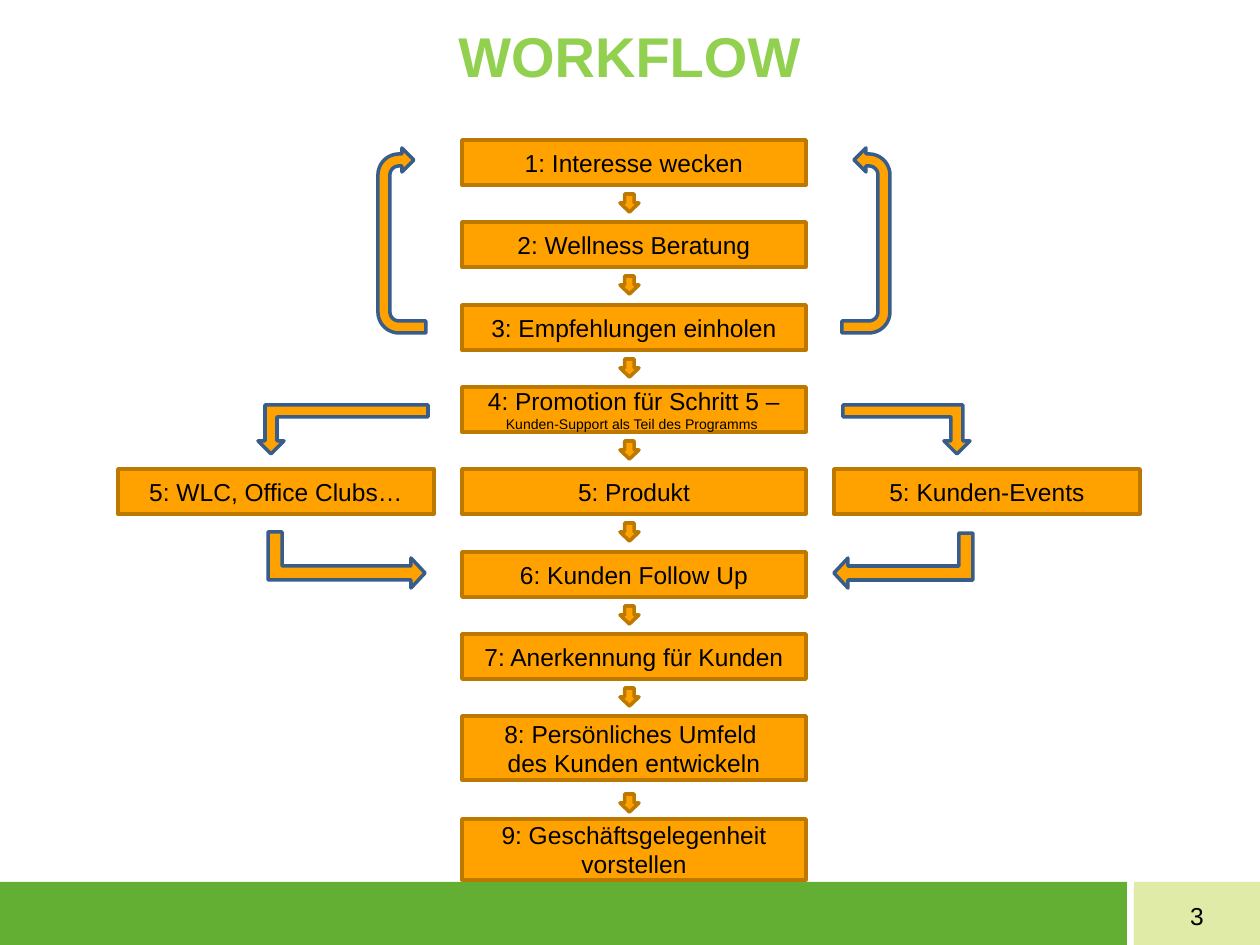
"""Build the WORKFLOW slide: a column of nine steps with side branches and return loops."""
from dataclasses import dataclass
from math import cos, pi, sin

from pptx import Presentation
from pptx import util as u
from pptx.dml.color import RGBColor
from pptx.enum import shapes, text

SCALE = 914400 / 126
FONT = "Arial"
COLORS = {
    "orange": "FFA200",
    "brown": "BD7800",
    "blue": "385D8A",
    "green": "63AF34",
    "pale": "E1EBA8",
    "title": "92D050",
    "black": "000000",
}
COLUMN_LEFT, COLUMN_WIDTH = 462, 344
ROW_TOP, ROW_PITCH, ROW_HEIGHT = 140, 82.3, 45
MIRROR_SUM = 1268


@dataclass(frozen=True)
class Run:
    """A piece of text with its size in points."""
    words: str
    size: int = 14
    break_after: bool = False


@dataclass(frozen=True)
class Step:
    """A labelled rectangle in the workflow."""
    runs: tuple[Run, ...]
    top: int
    left: int = COLUMN_LEFT
    width: int = COLUMN_WIDTH
    height: int = ROW_HEIGHT


@dataclass(frozen=True)
class BentArrow:
    """A block arrow along a right-angled route of (x, y) points."""
    route: tuple[tuple[int, int], ...]
    half_shaft: int
    half_head: int
    head_length: int
    radius: int = 0


def row_top(index: int) -> int:
    """Return the top of an evenly spaced row."""
    return round(ROW_TOP + index * ROW_PITCH)


LABELS = (
    (Run("1: Interesse wecken"),),
    (Run("2: Wellness Beratung"),),
    (Run("3: Empfehlungen einholen"),),
    (Run("4: Promotion für Schritt 5 – "), Run("Kunden-Support als Teil des Programms ", 8)),
    (Run("5: Produkt"),),
    (Run("6: Kunden Follow Up"),),
    (Run("7: Anerkennung für Kunden"),),
)
COLUMN = [Step(runs, row_top(index)) for index, runs in enumerate(LABELS)] + [
    Step((Run("8: Persönliches Umfeld ", break_after=True), Run("des Kunden entwickeln")), 716, height=64),
    Step((Run("9: Geschäftsgelegenheit vorstellen"),), 819, height=61),
]
BRANCHES = [
    Step((Run("5: WLC, Office Clubs…"),), row_top(4), 118, 316),
    Step((Run("5: Kunden-Events"),), row_top(4), 834, 306),
]
DOWN_ARROW_TOPS = [step.top + 54 for step in COLUMN[:7]] + [794]
LOOP_ROUTE = ((426, 327), (384, 327), (384, 160), (414, 160))
BENT_ARROWS = [
    BentArrow(((428, 411), (271, 411), (271, 454)), 6, 13, 13),
    BentArrow(((843, 411), (957, 411), (957, 454)), 6, 13, 13),
    BentArrow(((275, 532), (275, 573), (425, 573)), 7, 15, 14),
    BentArrow(((966, 533), (966, 573), (834, 573)), 7, 15, 14),
    BentArrow(LOOP_ROUTE, 6, 12, 12, 15),
    BentArrow(tuple((MIRROR_SUM - x, y) for x, y in LOOP_ROUTE), 6, 12, 12, 15),
]


def emu(px: float) -> u.Emu:
    """Convert px to EMU."""
    return u.Emu(round(px * SCALE))


def color(name: str) -> RGBColor:
    """Look up a named colour."""
    return RGBColor.from_string(COLORS[name])


def style(shape, fill: str, line: str | None = None) -> None:
    """Give a shape a flat fill and an optional outline."""
    shape.shadow.inherit = False
    shape.fill.solid()
    shape.fill.fore_color.rgb = color(fill)
    if line:
        shape.line.color.rgb = color(line)
        shape.line.width = u.Pt(2)
    else:
        shape.line.fill.background()


def write(box, runs: tuple[Run, ...], ink: str = "black", bold: bool = False) -> None:
    """Write centred runs into the first paragraph of a box."""
    para = box.text_frame.paragraphs[0]
    para.alignment = text.PP_ALIGN.CENTER
    for run in runs:
        span = para.add_run()
        span.text = run.words
        span.font.name = FONT
        span.font.size = u.Pt(run.size)
        span.font.bold = bold
        span.font.color.rgb = color(ink)
        if run.break_after:
            para.add_line_break()


def add_block(page, kind, left: int, top: int, width: int, height: int, fill: str, line: str | None = None):
    """Add a styled preset shape."""
    block = page.shapes.add_shape(kind, emu(left), emu(top), emu(width), emu(height))
    style(block, fill, line)
    block.text_frame.vertical_anchor = text.MSO_ANCHOR.MIDDLE
    return block


def add_step(page, step: Step) -> None:
    """Add a labelled step rectangle."""
    box = add_block(page, shapes.MSO_SHAPE.RECTANGLE, step.left, step.top,
                    step.width, step.height, "orange", "brown")
    box.text_frame.word_wrap = True
    write(box, step.runs)


def shaft_side(arrow: BentArrow, points: list[complex], ways: list[complex], side: int) -> list[complex]:
    """Trace one side of the shaft from tail to head."""
    offset = side * arrow.half_shaft
    edge = [points[0] + offset * 1j * ways[0]]
    for corner, before, after in zip(points[1:-1], ways, ways[1:]):
        turn = (before.conjugate() * after).imag
        if arrow.radius:
            center = corner + arrow.radius * (after - before)
            reach = arrow.radius - offset * turn
            angles = [pi / 2 * part / 12 for part in range(13)]
            edge += [center + reach * (before * sin(angle) - after * cos(angle)) for angle in angles]
        else:
            edge.append(corner + offset * turn * (after - before))
    neck = points[-1] - arrow.head_length * ways[-1]
    return edge + [neck + reach * side * 1j * ways[-1] for reach in (arrow.half_shaft, arrow.half_head)]


def add_bent_arrow(page, arrow: BentArrow) -> None:
    """Add a block arrow that follows its route."""
    points = [complex(*point) for point in arrow.route]
    ways = [(end - start) / abs(end - start) for start, end in zip(points, points[1:])]
    near, far = (shaft_side(arrow, points, ways, side) for side in (1, -1))
    outline = [(emu(point.real), emu(point.imag)) for point in near + [points[-1]] + far[::-1]]
    builder = page.shapes.build_freeform(*outline[0])
    builder.add_line_segments(outline[1:], close=True)
    style(builder.convert_to_shape(), "orange", "blue")


def add_footer(page) -> None:
    """Add the footer band and the page number."""
    rectangle = shapes.MSO_SHAPE.RECTANGLE
    add_block(page, rectangle, 1134, 882, 126, 63, "pale")
    number = add_block(page, rectangle, 1134, 887, 126, 58, "pale")
    number.text_frame.word_wrap = False
    write(number, (Run("3"),))
    add_block(page, rectangle, 0, 882, 1127, 63, "green")


def main() -> None:
    """Build and save the deck."""
    deck = Presentation()
    deck.slide_width, deck.slide_height = emu(1260), emu(945)
    page = deck.slides.add_slide(deck.slide_layouts[6])
    add_footer(page)
    for step in COLUMN + BRANCHES:
        add_step(page, step)
    for top in DOWN_ARROW_TOPS:
        add_block(page, shapes.MSO_SHAPE.DOWN_ARROW, 620, top, 19, 18, "orange", "brown")
    for arrow in BENT_ARROWS:
        add_bent_arrow(page, arrow)
    title = page.shapes.add_textbox(emu(338), emu(15), emu(583), emu(81))
    title.text_frame.word_wrap = True
    write(title, (Run("WORKFLOW", 32),), "title", True)
    deck.save("out.pptx")


if __name__ == "__main__":
    main()
